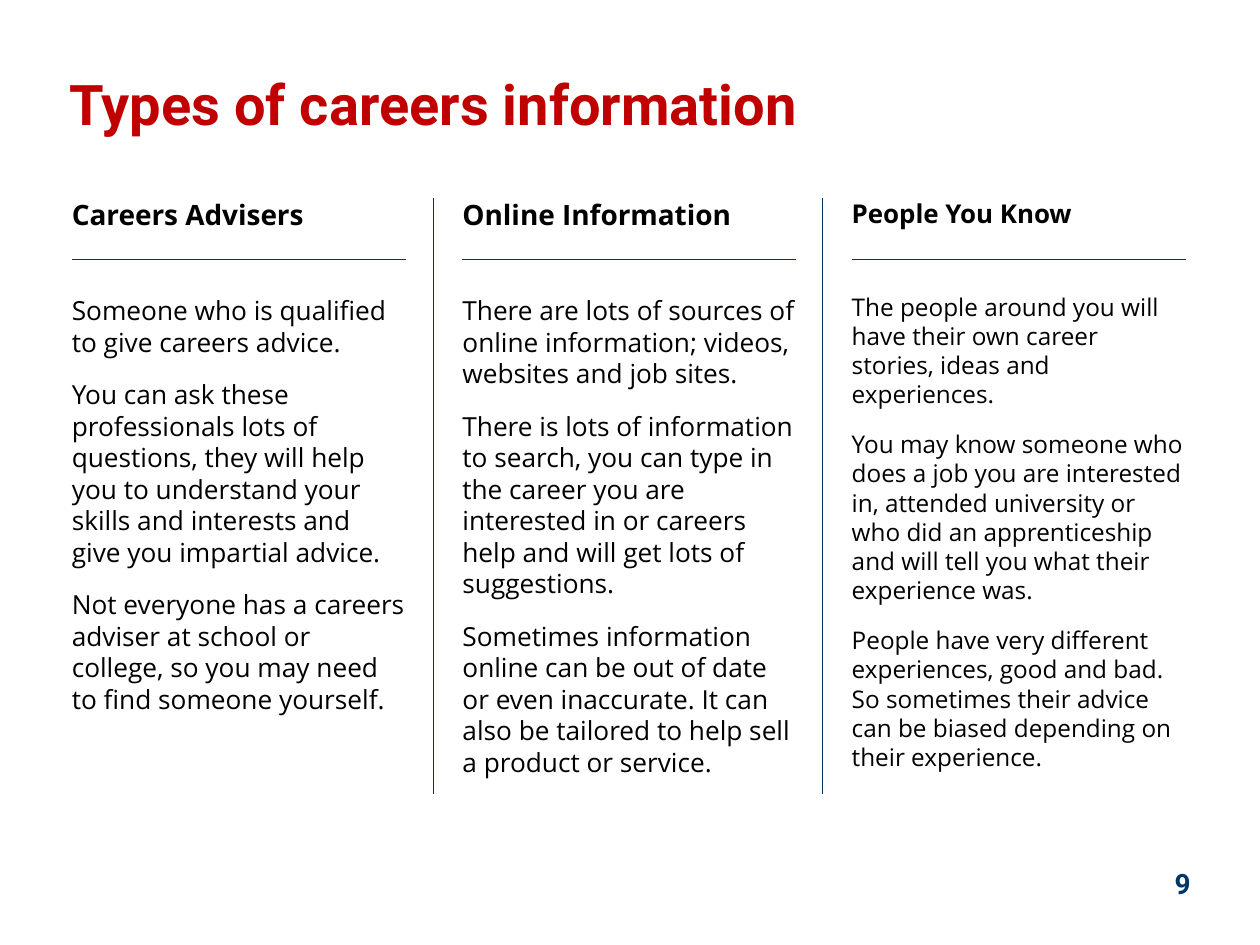
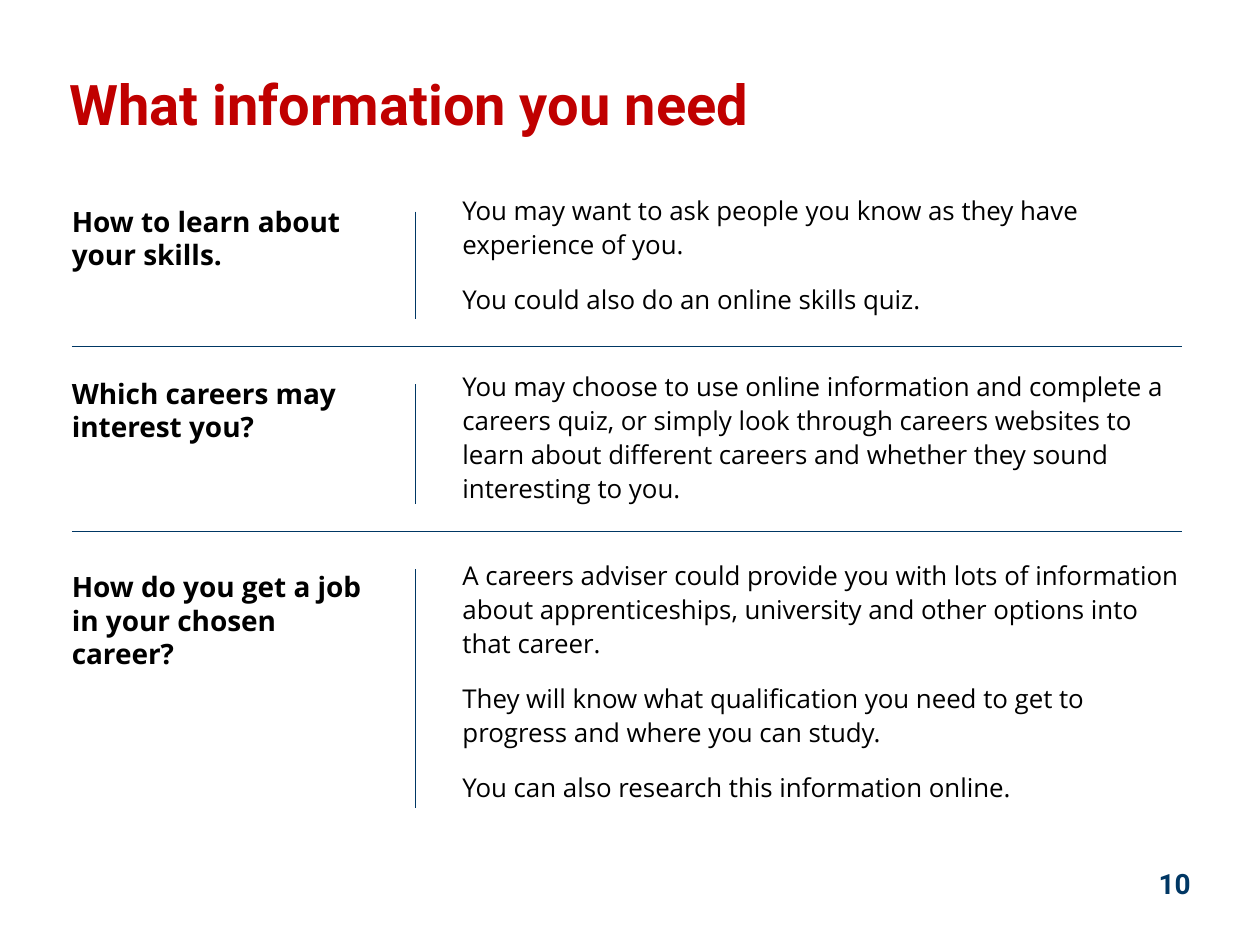
from lxml.etree import SubElement
from pptx import Presentation
from pptx.dml.color import RGBColor
from pptx.enum.shapes import MSO_CONNECTOR
from pptx.enum.text import MSO_ANCHOR, MSO_AUTO_SIZE, PP_ALIGN
from pptx.oxml.ns import qn
from pptx.util import Inches, Pt

RED = RGBColor(0xC0, 0x00, 0x00)
NAVY = RGBColor(0x00, 0x37, 0x64)
BLACK = RGBColor(0x00, 0x00, 0x00)
BODY_FONT, TITLE_FONT = "Open Sans", "Roboto"

SOURCES = [
    {"heading": "Careers Advisers", "heading_size": 16, "size": 15, "texts": [
        "Someone who is qualified to give careers advice.",
        "You can ask these professionals lots of questions, they will help you to understand "
        "your skills and interests and give you impartial advice.",
        "Not everyone has a careers adviser at school or college, so you may need to find "
        "someone yourself."]},
    {"heading": "Online Information", "heading_size": 16, "size": 15, "texts": [
        "There are lots of sources of online information; videos, websites and job sites.",
        "There is lots of information to search, you can type in the career you are interested "
        "in or careers help and will get lots of suggestions.",
        "Sometimes information online can be out of date or even inaccurate. It can also be "
        "tailored to help sell a product or service."]},
    {"heading": "People You Know", "heading_size": 14.8, "size": 13.9, "texts": [
        "The people around you will have their own career stories, ideas and experiences.",
        "You may know someone who does a job you are interested in, attended university or \n"
        "who did an apprenticeship and will tell you what their experience was.",
        "People have very different experiences, good and bad. So sometimes their advice can be "
        "biased depending on their experience."]},
]

QUESTIONS = [
    ("How to learn about your skills.", 60),
    ("Which careers may interest you?", 72),
    ("How do you get a job in your chosen career?", 60),
]
ANSWERS = [
    ("You may want to ask people you know as they have experience of you.", 12),
    ("You could also do an online skills quiz.", 30),
    ("You may choose to use online information and complete a careers quiz, or simply look "
     "through careers websites to learn about different careers and whether they sound "
     "interesting to you.", 30),
    ("A careers adviser could provide you with lots of information about apprenticeships, "
     "university and other options into \nthat career.", 12),
    ("They will know what qualification you need to get to progress and where you can study.", 12),
    ("You can also research this information online.", 12),
]

COLUMN_LEFTS, COLUMN_WIDTH = (0.57, 3.67, 6.76), 2.65
COLUMN_TOP, COLUMN_BOTTOM, HEADING_RULE = 1.57, 6.3, 2.06
DIVIDER_GAP = 0.23
QUESTION_DIVIDER, RULE_END = 3.3, 9.38
ROW_RULES = [2.75, 4.22]
ROW_SPANS = [(1.68, 2.53), (3.05, 4), (4.52, 6.41)]


def place(box, left, top, width, height, anchor=MSO_ANCHOR.TOP):
    """Position a text shape without margins and return its text frame."""
    box.left, box.top, box.width, box.height = map(Inches, (left, top, width, height))
    frame = box.text_frame
    frame.auto_size = MSO_AUTO_SIZE.NONE
    frame.word_wrap = True
    frame.vertical_anchor = anchor
    frame.margin_left = frame.margin_top = frame.margin_right = frame.margin_bottom = 0
    return frame


def write(frame, text, size=16, font=BODY_FONT, color=BLACK, bold=False,
          align=PP_ALIGN.LEFT, spacing=1.0, after=0):
    """Write one formatted paragraph, filling the first one if it is empty."""
    first = frame.paragraphs[0]
    para = frame.add_paragraph() if first.text else first
    para.text = text
    properties = para._p.get_or_add_pPr()
    properties.set("marL", "0")
    properties.set("indent", "0")
    SubElement(properties, qn("a:buNone"))
    para.alignment = align
    para.line_spacing = spacing
    para.space_before = Pt(0)
    para.space_after = Pt(after)
    for span in para.runs:
        span.font.size = Pt(size)
        span.font.name = font
        span.font.bold = bold
        span.font.color.rgb = color


def add_rule(page, start_x, start_y, end_x, end_y):
    """Draw a thin navy line."""
    rule = page.shapes.add_connector(
        MSO_CONNECTOR.STRAIGHT, *map(Inches, (start_x, start_y, end_x, end_y)))
    rule.line.color.rgb = NAVY
    rule.line.width = Pt(0.75)
    SubElement(rule._element.spPr, qn("a:effectLst"))


def add_box(page):
    """Add an empty text box, to be placed later."""
    return page.shapes.add_textbox(0, 0, 0, 0)


def add_page(deck, title, number):
    """Add a page with its title and page number."""
    page = deck.slides.add_slide(deck.slide_layouts[1])
    frame = place(page.shapes.title, 0.55, 0.68, 7.69, 0.27, MSO_ANCHOR.MIDDLE)
    write(frame, title, size=32, font=TITLE_FONT, color=RED, bold=True)
    frame = place(add_box(page), 8.86, 6.88, 0.59, 0.4)
    write(frame, str(number), font=TITLE_FONT, color=NAVY, bold=True, align=PP_ALIGN.RIGHT)
    return page


def add_sources(deck):
    """Build the three-column page."""
    page = add_page(deck, "Types of careers information", 9)
    for index, (left, source) in enumerate(zip(COLUMN_LEFTS, SOURCES)):
        box = add_box(page) if index else page.placeholders[1]
        frame = place(box, left, COLUMN_TOP, COLUMN_WIDTH, 5.2)
        write(frame, source["heading"], size=source["heading_size"], bold=True, after=36)
        for text in source["texts"]:
            write(frame, text, size=source["size"], after=12)
        add_rule(page, left, HEADING_RULE, left + COLUMN_WIDTH, HEADING_RULE)
        if index:
            divider = left - DIVIDER_GAP
            add_rule(page, divider, COLUMN_TOP, divider, COLUMN_BOTTOM)


def add_questions(deck):
    """Build the page of questions and answers."""
    page = add_page(deck, "What information you need", 10)
    question_left, answer_left, _ = COLUMN_LEFTS
    frame = place(page.placeholders[1], question_left, 1.62, 2.39, 4.8)
    for text, after in QUESTIONS:
        write(frame, text, bold=True, after=after)
    frame = place(add_box(page), answer_left, 1.52, 5.79, 5.01)
    for text, after in ANSWERS:
        write(frame, text, size=14.8, spacing=1.1, after=after)
    for top, bottom in ROW_SPANS:
        add_rule(page, QUESTION_DIVIDER, top, QUESTION_DIVIDER, bottom)
    for height in ROW_RULES:
        add_rule(page, question_left, height, RULE_END, height)


def main():
    """Build and save the deck."""
    deck = Presentation()
    deck.slide_width, deck.slide_height = Inches(10), Inches(7.5)
    add_sources(deck)
    add_questions(deck)
    deck.save("out.pptx")


if __name__ == "__main__":
    main()
